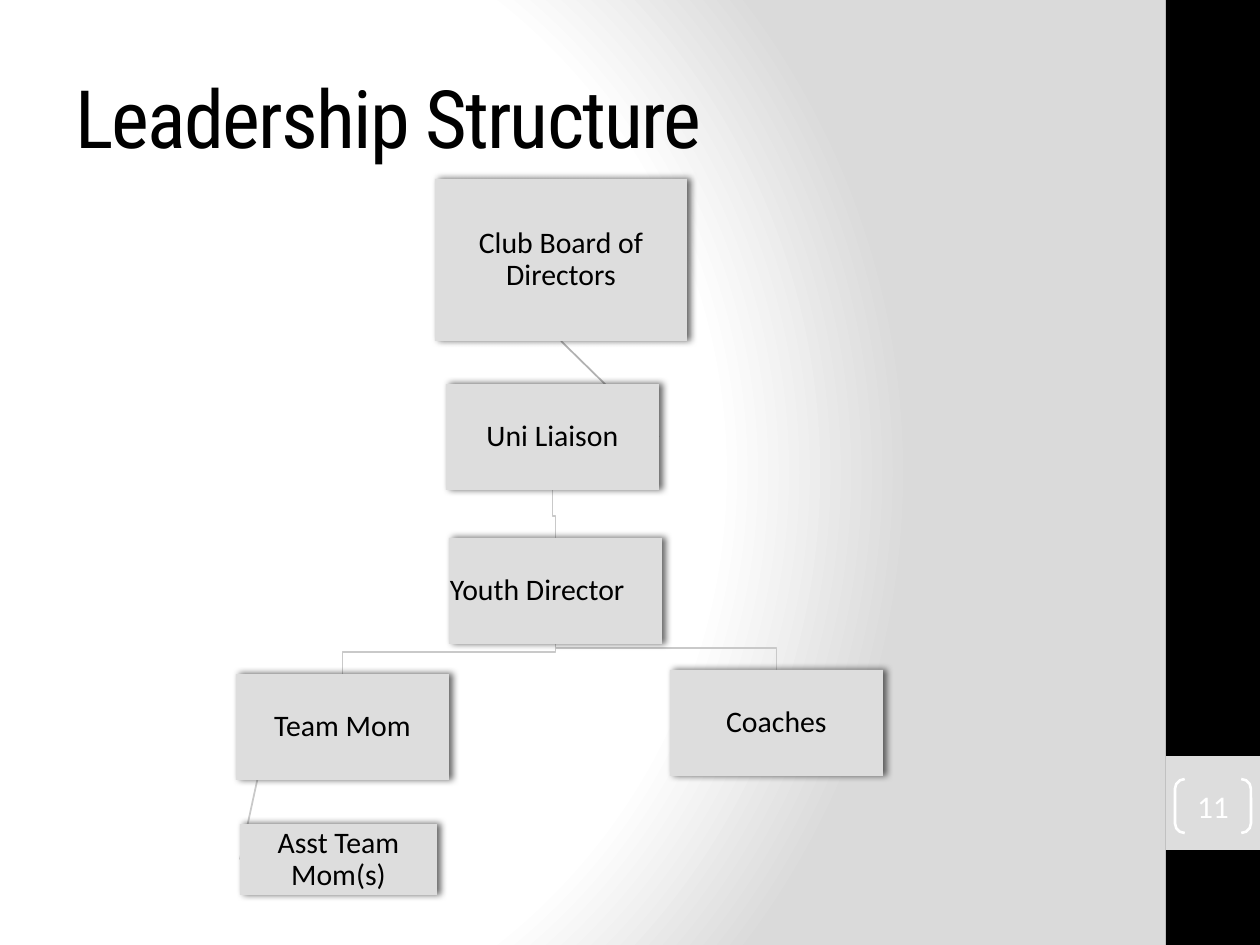
from pptx import Presentation
from pptx.dml.color import RGBColor
from pptx.enum.shapes import MSO_CONNECTOR, MSO_SHAPE
from pptx.enum.text import MSO_ANCHOR, PP_ALIGN
from pptx.oxml import parse_xml
from pptx.oxml.ns import nsdecls
from pptx.util import Emu, Pt

SCALE = 914400 / 126
COLORS = {"black": "000000", "white": "FFFFFF", "panel": "DDDDDD",
          "edge": "DADADA", "link": "C9C9C9", "top_link": "B1B1B1"}
BOXES = {
    "board": ("Club Board of Directors", 435, 179, 252, 162),
    "liaison": ("Uni Liaison", 446, 384, 213, 106),
    "director": ("Youth Director", 449, 538, 213, 106),
    "coaches": ("Coaches", 670, 670, 213, 106),
    "mom": ("Team Mom", 236, 674, 213, 106),
    "assistant": ("Asst Team Mom(s)", 240, 824, 197, 71),
}
ELBOWS = [("mom", "director"), ("coaches", "director"), ("director", "liaison")]
ELBOW_DROP = 22


def px(length):
    """Turn pixels into EMU."""
    return Emu(round(length * SCALE))


def color(name):
    """Look up a colour by name."""
    return RGBColor.from_string(COLORS[name])


def paint_background(page):
    """Give the page its circular gradient."""
    stops = "".join(
        f'<a:gs pos="{place}000"><a:srgbClr val="{COLORS[name]}"/></a:gs>'
        for place, name in [(0, "white"), (75, "white"), (100, "edge")])
    page._element.cSld.insert(0, parse_xml(
        f'<p:bg {nsdecls("p", "a")}><p:bgPr><a:gradFill rotWithShape="1">'
        f'<a:gsLst>{stops}</a:gsLst><a:path path="circle">'
        '<a:fillToRect l="20000" t="50000" r="100000" b="50000"/></a:path>'
        '</a:gradFill><a:effectLst/></p:bgPr></p:bg>'))


def add_panel(page, left, top, width, height, fill):
    """Add a plain filled rectangle."""
    panel = page.shapes.add_shape(
        MSO_SHAPE.RECTANGLE, px(left), px(top), px(width), px(height))
    panel.shadow.inherit = False
    panel.fill.solid()
    panel.fill.fore_color.rgb = color(fill)
    panel.line.fill.background()
    return panel


def write(shape, text, font, size, ink, align=PP_ALIGN.CENTER):
    """Write one vertically centred paragraph into a shape."""
    frame = shape.text_frame
    frame.word_wrap = True
    frame.vertical_anchor = MSO_ANCHOR.MIDDLE
    para = frame.paragraphs[0]
    para.text = text
    para.alignment = align
    para.font.name = font
    para.font.size = Pt(size)
    para.font.color.rgb = color(ink)
    return para


def set_margins(shape, margin):
    """Set all four text margins of a shape."""
    frame = shape.text_frame
    frame.margin_left = frame.margin_right = px(margin)
    frame.margin_top = frame.margin_bottom = px(margin)


def add_role(page, text, left, top, width, height):
    """Add a shadowed box that names a role."""
    box = add_panel(page, left, top, width, height, "panel")
    effects = box._element.spPr.find("{*}effectLst")
    effects.append(parse_xml(
        f'<a:outerShdw {nsdecls("a")} blurRad="{Pt(4)}" dist="{Pt(2)}" dir="0">'
        f'<a:srgbClr val="{COLORS["black"]}"><a:alpha val="60000"/></a:srgbClr>'
        '</a:outerShdw>'))
    set_margins(box, 1)
    write(box, text, "Calibri", 17, "black").line_spacing = 0.9
    return box


def send_back(page, shape):
    """Move a shape behind everything else."""
    page.shapes._spTree.insert(2, shape._element)


def add_elbow(page, parent, child):
    """Draw a stepped line from the bottom of a parent to the top of a child."""
    start = parent.left + parent.width // 2
    end = child.left + child.width // 2
    turn = child.top - px(ELBOW_DROP)
    builder = page.shapes.build_freeform(start, parent.top + parent.height)
    builder.add_line_segments([(start, turn), (end, turn), (end, child.top)], close=False)
    elbow = builder.convert_to_shape()
    elbow.shadow.inherit = False
    elbow.fill.background()
    elbow.line.color.rgb = color("link")
    elbow.line.width = Pt(1)
    send_back(page, elbow)


def add_link(page, start, child, side, ink):
    """Draw a straight line from a point to the side of a child."""
    link = page.shapes.add_connector(MSO_CONNECTOR.STRAIGHT, *start, *start)
    link.end_connect(child, side)
    link.line.color.rgb = color(ink)
    link.line.width = Pt(1)
    link._element.spPr.append(parse_xml(f'<a:effectLst {nsdecls("a")}/>'))
    send_back(page, link)
    return link


def add_title(page, text):
    """Add the page title."""
    box = page.shapes.add_textbox(px(63), px(38), px(1050), px(157))
    para = write(box, text, "Roboto Condensed", 46, "black", PP_ALIGN.LEFT)
    para.runs[0].font._element.set("spc", "-100")


def add_page_number(page, text):
    """Add the bracketed page number."""
    bracket = page.shapes.add_shape(
        MSO_SHAPE.DOUBLE_BRACKET, px(1175), px(779), px(76), px(54))
    bracket.adjustments[0] = 0.18
    bracket.shadow.inherit = False
    bracket.fill.background()
    bracket.line.color.rgb = color("white")
    bracket.line.width = Pt(1.5)
    set_margins(bracket, 0)
    write(bracket, text, "Calibri", 18, "white")


def add_chart_of_roles(page):
    """Add the role boxes and the lines between them."""
    roles = {name: add_role(page, *details) for name, details in BOXES.items()}
    director = roles["director"].text_frame
    director.paragraphs[0].alignment = PP_ALIGN.LEFT
    for child, parent in ELBOWS:
        add_elbow(page, roles[parent], roles[child])
    board, mom = roles["board"], roles["mom"]
    link = add_link(page, (board.left, board.top), roles["liaison"], 3, "top_link")
    link.begin_connect(board, 2)
    mom_foot = (mom.left + mom.width // 10, mom.top + mom.height)
    add_link(page, mom_foot, roles["assistant"], 1, "link")


def main():
    """Build the leadership page and save it."""
    deck = Presentation()
    deck.slide_width, deck.slide_height = px(1260), px(945)
    page = deck.slides.add_slide(deck.slide_layouts[6])
    paint_background(page)
    add_chart_of_roles(page)
    add_panel(page, 1166, 0, 94, 945, "black")
    add_panel(page, 1166, 756, 94, 94, "panel")
    add_title(page, "Leadership Structure")
    add_page_number(page, "11")
    deck.save("out.pptx")


if __name__ == "__main__":
    main()
